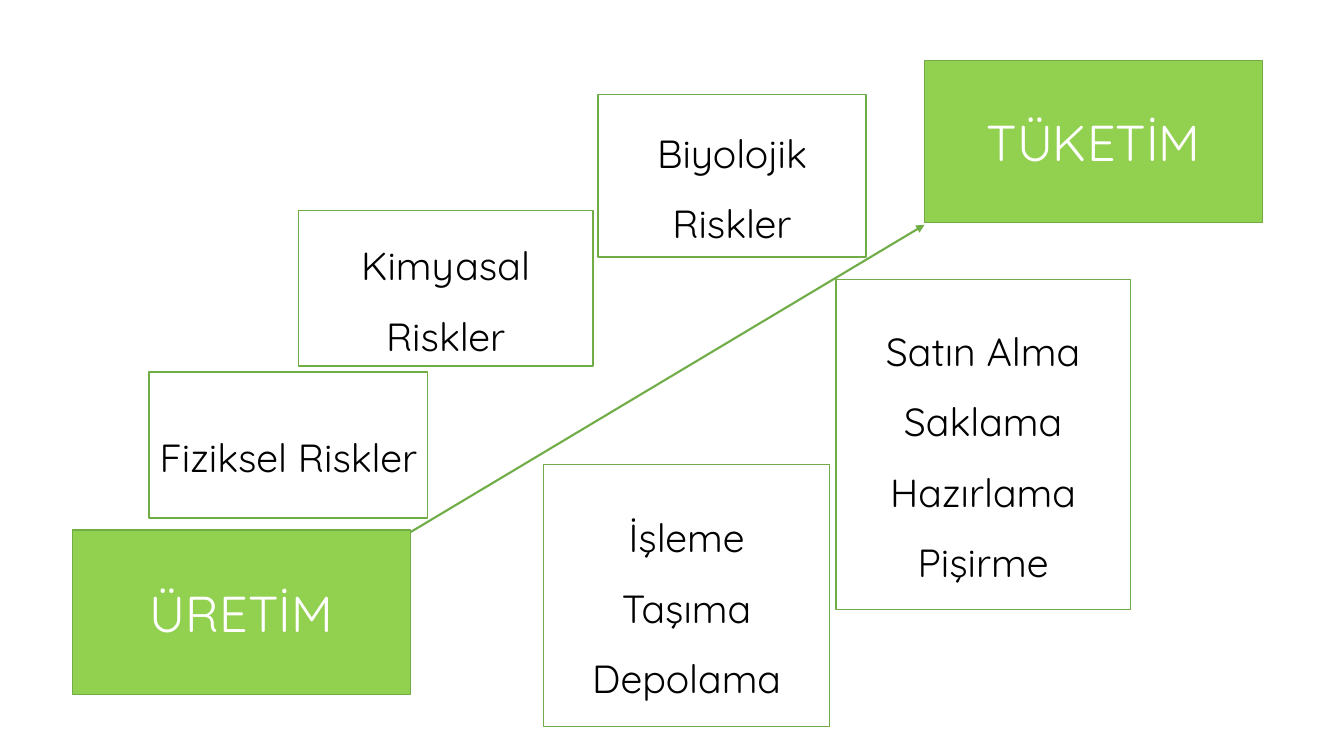
from dataclasses import dataclass

from lxml.etree import SubElement
from pptx import Presentation
from pptx.dml.color import RGBColor
from pptx.enum.shapes import MSO_CONNECTOR, MSO_SHAPE
from pptx.enum.text import MSO_ANCHOR, PP_ALIGN
from pptx.oxml.ns import qn
from pptx.util import Inches, Pt


@dataclass(frozen=True)
class Theme:
    font: str = "Quicksand"
    green: RGBColor = RGBColor(0x92, 0xD0, 0x50)
    outline: RGBColor = RGBColor(0x70, 0xAD, 0x47)
    white: RGBColor = RGBColor(0xFF, 0xFF, 0xFF)
    black: RGBColor = RGBColor(0, 0, 0)
    stage_size: Pt = Pt(36)
    detail_size: Pt = Pt(28)
    border: Pt = Pt(1)
    arrow: Pt = Pt(1.5)


THEME = Theme()

STAGES = [
    ("ÜRETİM", (0.72, 5.26, 3.35, 1.63)),
    ("TÜKETİM", (9.17, 0.6, 3.35, 1.61)),
]

DETAILS = [
    (["Fiziksel Riskler"], (1.48, 3.69, 2.76, 1.45)),
    (["Biyolojik Riskler"], (5.93, 0.94, 2.66, 1.61)),
    (["Kimyasal Riskler"], (2.96, 2.09, 2.92, 1.54)),
    (["İşleme", "Taşıma", "Depolama"], (5.39, 4.61, 2.84, 2.6)),
    (["Satın Alma", "Saklama", "Hazırlama", "Pişirme"], (8.29, 2.77, 2.92, 3.28)),
]


def add_box(slide, lines, bounds, fill, color, size, spacing):
    shape = slide.shapes.add_shape(MSO_SHAPE.RECTANGLE, *map(Inches, bounds))
    shape.shadow.inherit = False
    shape.fill.solid()
    shape.fill.fore_color.rgb = fill
    shape.line.color.rgb = THEME.outline
    shape.line.width = THEME.border
    frame = shape.text_frame
    frame.word_wrap = True
    frame.vertical_anchor = MSO_ANCHOR.MIDDLE
    for index, text in enumerate(lines):
        paragraph = frame.add_paragraph() if index else frame.paragraphs[0]
        paragraph.alignment = PP_ALIGN.CENTER
        paragraph.line_spacing = spacing
        run = paragraph.add_run()
        run.text = text
        run.font.name = THEME.font
        run.font.size = size
        run.font.color.rgb = color


def add_stage(slide, name, bounds):
    add_box(slide, [name], bounds, THEME.green, THEME.white, THEME.stage_size, 1.0)


def add_detail(slide, lines, bounds):
    add_box(slide, lines, bounds, THEME.white, THEME.black, THEME.detail_size, 1.5)


def add_arrow(slide, start, end):
    connector = slide.shapes.add_connector(
        MSO_CONNECTOR.STRAIGHT, *map(Inches, start + end)
    )
    connector.line.color.rgb = THEME.outline
    connector.line.width = THEME.arrow
    SubElement(connector.line._get_or_add_ln(), qn("a:tailEnd"), type="triangle")
    SubElement(connector._element.spPr, qn("a:effectLst"))


def main():
    presentation = Presentation()
    presentation.slide_width = Inches(13.33)
    presentation.slide_height = Inches(7.5)
    slide = presentation.slides.add_slide(presentation.slide_layouts[6])
    for name, bounds in STAGES:
        add_stage(slide, name, bounds)
    add_arrow(slide, (4.07, 5.28), (9.17, 2.23))
    for lines, bounds in DETAILS:
        add_detail(slide, lines, bounds)
    presentation.save("out.pptx")


if __name__ == "__main__":
    main()
